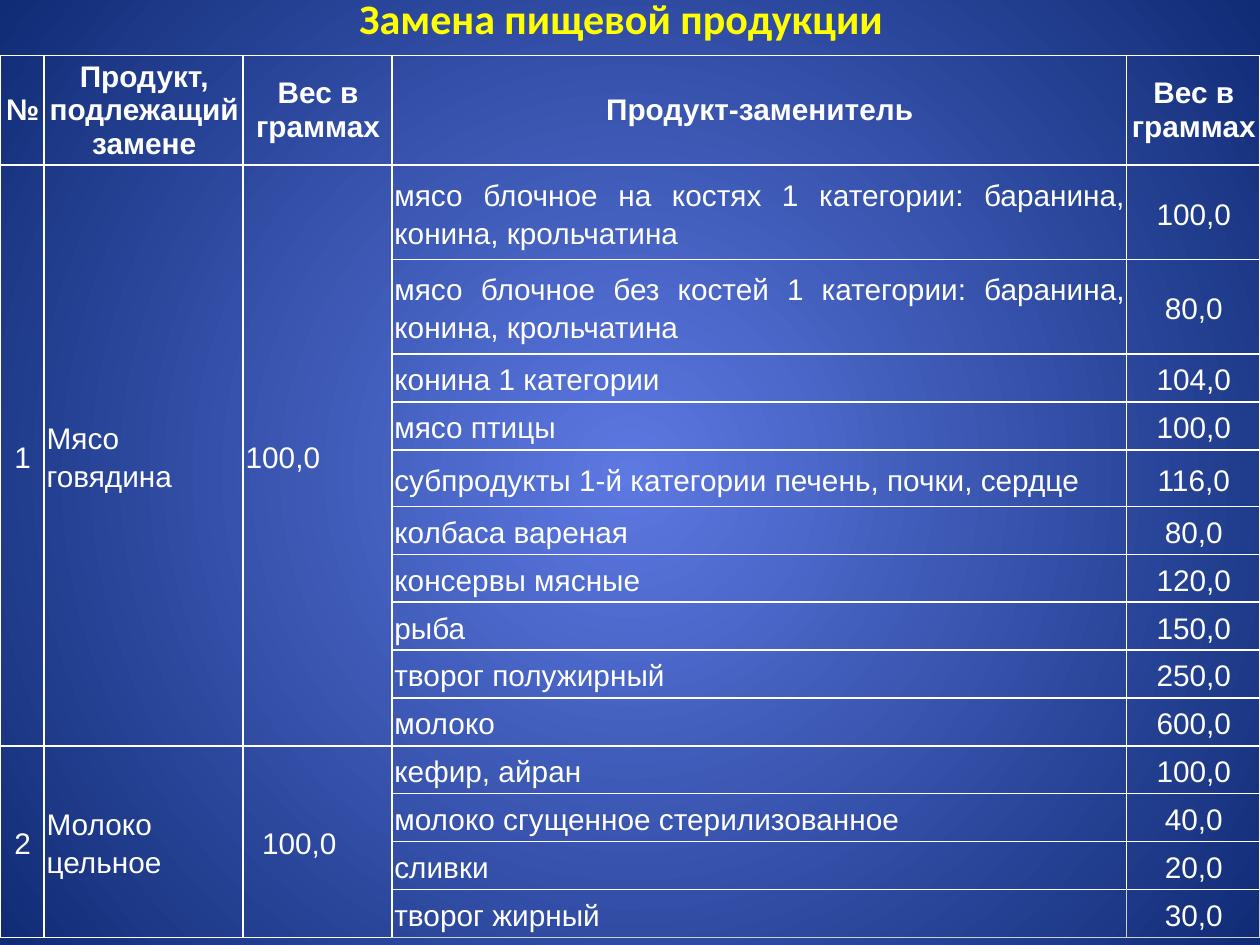
import pptx
import pptx.dml.color
import pptx.enum.text
import pptx.oxml
import pptx.oxml.ns
import pptx.util

Inches = pptx.util.Inches
Pt = pptx.util.Pt
RGBColor = pptx.dml.color.RGBColor
ALIGN = pptx.enum.text.PP_ALIGN
MIDDLE = pptx.enum.text.MSO_ANCHOR.MIDDLE
NS = pptx.oxml.ns.nsdecls("a")

WHITE = RGBColor(0xFF, 0xFF, 0xFF)
GREY = RGBColor(0xCF, 0xCF, 0xCF)
YELLOW = RGBColor(0xFF, 0xFF, 0x00)
LIGHT = RGBColor(0x5D, 0x79, 0xE2)
DARK = RGBColor(0x10, 0x2C, 0x76)

HEADS = ["№", "Продукт, подлежащий замене", "Вес в граммах",
         "Продукт-заменитель", "Вес в граммах"]
GROUPS = [
    ("1", "Мясо говядина", "100,0", 0.01, [
        ("мясо блочное на костях 1 категории: баранина, конина, крольчатина", "100,0"),
        ("мясо блочное без костей 1 категории: баранина, конина, крольчатина", "80,0"),
        ("конина 1 категории", "104,0"),
        ("мясо птицы", "100,0"),
        ("субпродукты 1-й категории печень, почки, сердце", "116,0"),
        ("колбаса вареная", "80,0"),
        ("консервы мясные", "120,0"),
        ("рыба", "150,0"),
        ("творог полужирный", "250,0"),
        ("молоко", "600,0"),
    ]),
    ("2", "Молоко цельное", "100,0", 0.14, [
        ("кефир, айран", "100,0"),
        ("молоко сгущенное стерилизованное", "40,0"),
        ("сливки", "20,0"),
        ("творог жирный", "30,0"),
    ]),
]
WIDTHS = [0.35, 1.58, 1.18, 5.83, 1.06]
HEIGHTS = [0.87, 0.75, 0.75, 0.38, 0.38, 0.45] + [0.38] * 9
ALIGNS = [ALIGN.CENTER, ALIGN.LEFT, ALIGN.JUSTIFY, ALIGN.JUSTIFY, ALIGN.CENTER]


def write(cell, text, align, bold=False, indent=0.01):
    cell.text = text
    par = cell.text_frame.paragraphs[0]
    par.alignment = align
    par.space_after = Pt(1)
    if not bold:
        par.line_spacing = 1.15
    par._p.get_or_add_pPr().set("marL", str(Inches(indent)))
    font = par.font
    font.name, font.size, font.bold = "Arial", Pt(17), bold
    font.color.rgb = WHITE


def border(cell, side, color):
    cell._tc.get_or_add_tcPr().append(pptx.oxml.parse_xml(
        f'<a:ln{side} {NS} w="{Pt(1)}"><a:solidFill><a:srgbClr val="{color}"/>'
        f'</a:solidFill></a:ln{side}>'))


deck = pptx.Presentation()
deck.slide_width, deck.slide_height = Inches(10), Inches(7.5)
slide = deck.slides.add_slide(deck.slide_layouts[6])

# Background glow from the centre
fill = slide.background.fill
fill.gradient()
for stop, color in zip(fill.gradient_stops, (LIGHT, DARK)):
    stop.color.rgb = color
grad = slide.element.find(".//" + pptx.oxml.ns.qn("a:gradFill"))
grad.remove(grad.find(pptx.oxml.ns.qn("a:lin")))
grad.append(pptx.oxml.parse_xml(
    f'<a:path {NS} path="circle"><a:fillToRect l="50000" t="50000" '
    'r="50000" b="50000"/></a:path>'))

# Table grid
table = slide.shapes.add_table(
    len(HEIGHTS), len(WIDTHS), 0, Inches(0.44),
    Inches(sum(WIDTHS)), Inches(sum(HEIGHTS))).table
table.first_row = table.horz_banding = False
for col, width in zip(table.columns, WIDTHS):
    col.width = Inches(width)
for row, height in zip(table.rows, HEIGHTS):
    row.height = Inches(height)

# Cell margins, borders and fill
last = len(HEIGHTS) - 1
for r, row in enumerate(table.rows):
    for c, cell in enumerate(row.cells):
        cell.margin_left = cell.margin_right = Inches(0.01)
        cell.margin_top = cell.margin_bottom = Inches(0.01)
        cell.vertical_anchor = MIDDLE
        greys = ""
        if r == last and c >= 3:
            greys = "RB" if c == 3 else "LRB"
        for side in "LRTB":
            border(cell, side, GREY if side in greys else WHITE)
        cell.fill.background()

# Header row
for c, head in enumerate(HEADS):
    write(table.cell(0, c), head, ALIGN.CENTER, bold=True)

# Products and their substitutes
top = 1
for num, name, weight, indent, subs in GROUPS:
    for c, text in enumerate((num, name, weight)):
        cell = table.cell(top, c)
        cell.merge(table.cell(top + len(subs) - 1, c))
        write(cell, text, ALIGNS[c], indent=indent if c == 2 else 0.01)
    for r, pair in enumerate(subs, top):
        for c, text in enumerate(pair, 3):
            write(table.cell(r, c), text, ALIGNS[c])
    top += len(subs)

# Title
box = slide.shapes.add_textbox(Inches(1.52), Inches(-0.11), Inches(6.82), Inches(0.5))
frame = box.text_frame
frame.word_wrap = True
frame.auto_size = pptx.enum.text.MSO_AUTO_SIZE.SHAPE_TO_FIT_TEXT
par = frame.paragraphs[0]
par.text = "Замена пищевой продукции"
par.alignment = ALIGN.CENTER
par.font.name, par.font.size, par.font.bold = "Calibri", Pt(24), True
par.font.color.rgb = YELLOW

deck.save("out.pptx")
